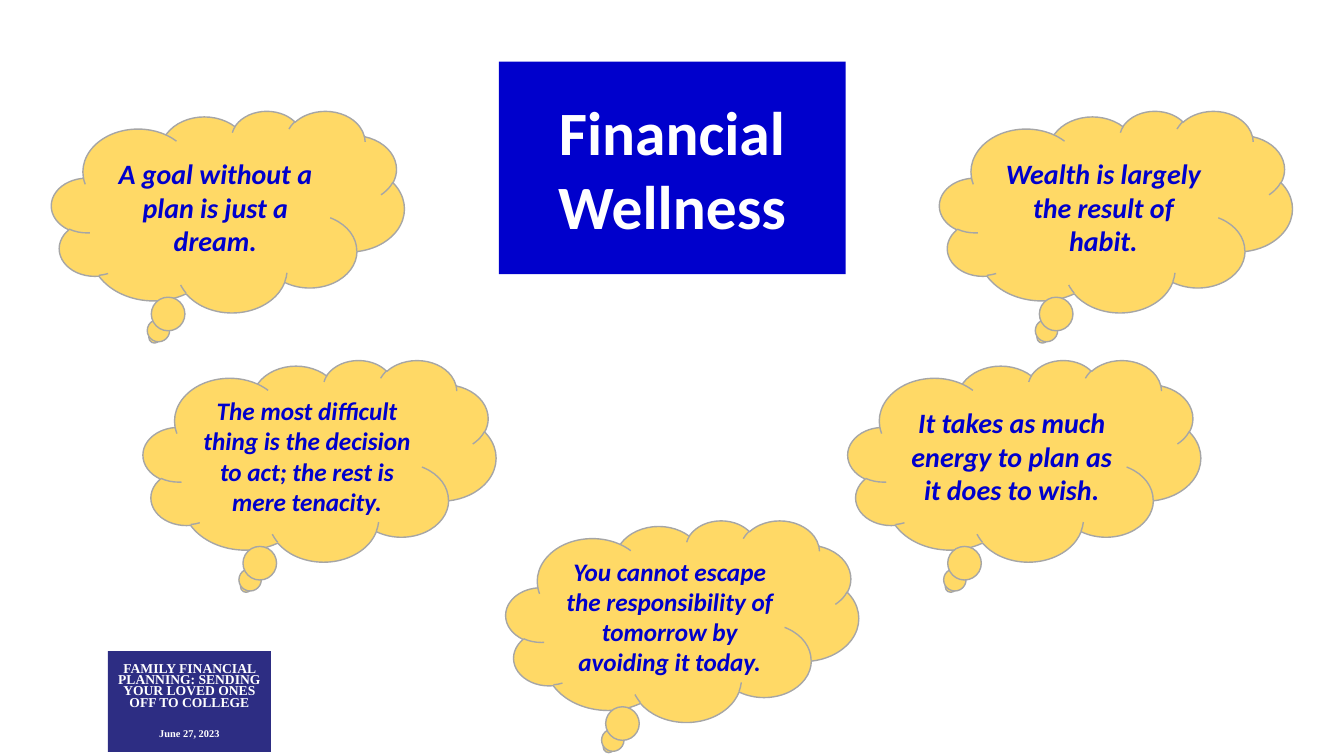
import pptx
import pptx.util
import pptx.dml.color
import pptx.enum.shapes
import pptx.enum.text
from lxml import etree

Cm, Pt = pptx.util.Cm, pptx.util.Pt
SHAPE = pptx.enum.shapes.MSO_SHAPE
ALIGN = pptx.enum.text.PP_ALIGN
BLUE, GOLD, GREY, NAVY, WHITE = "0000CC", "FFD966", "A6A6A6", "2D2D83", "FFFFFF"
WIDE, HIGH = 33.87, 19.05
CLOUD_W, CLOUD_H = 8.89, 5.08

TITLE = "Financial Wellness"
# Rows of clouds: left edge, top, text size and quote; a pair mirrors left to right.
ROWS = [
    (1.3, 2.79, [(20, "A goal without a plan is just a dream."),
                 (20, "Wealth is largely the result of habit.")]),
    (3.61, 9.07, [(18, "The most difficult thing is the decision to act; "
                       "the rest is mere tenacity."),
                  (20, "It takes as much energy to plan as it does to wish.")]),
    (12.75, 13.11, [(18, "You cannot escape the responsibility of tomorrow "
                         "by avoiding it today.")]),
]
# Footer lines: text, size, space before
FOOTER = [
    ("FAMILY FINANCIAL PLANNING: SENDING YOUR LOVED ONES OFF TO COLLEGE", 9.7, 0),
    ("June 27, 2023", 7.4, 15),
]


def color(code):
    return pptx.dml.color.RGBColor.from_string(code)


def paint(shape, fill, line=None):
    shape.fill.solid()
    shape.fill.fore_color.rgb = color(fill)
    if line:
        shape.line.color.rgb = color(line)
        shape.line.width = Pt(1)
    else:
        shape.line.fill.background()


def add(kind, box, fill, line=None):
    shape = slide.shapes.add_shape(kind, *map(Cm, box))
    shape.shadow.inherit = False
    paint(shape, fill, line)
    return shape


def write(para, text, size, code, face="Calibri", slant=False):
    para.text = text
    para.alignment = ALIGN.CENTER
    font = para.font
    font.name, font.size, font.bold, font.italic = face, Pt(size), True, slant
    font.color.rgb = color(code)


def middle(shape):
    frame = shape.text_frame
    frame.word_wrap = True
    frame.auto_size = pptx.enum.text.MSO_AUTO_SIZE.NONE
    frame.vertical_anchor = pptx.enum.text.MSO_ANCHOR.MIDDLE
    return frame


deck = pptx.Presentation()
deck.slide_width, deck.slide_height = Cm(WIDE), Cm(HIGH)
slide = deck.slides.add_slide(deck.slide_layouts[5])

# Title placeholder, given rounded corners
title = slide.shapes.title
title.left, title.top, title.width, title.height = map(Cm, (12.57, 1.55, 8.74, 5.36))
props = title.element.spPr
geom = etree.SubElement(props, pptx.oxml.ns.qn("a:prstGeom"), prst="roundRect")
etree.SubElement(geom, pptx.oxml.ns.qn("a:avLst"))
paint(title, BLUE)
write(middle(title).paragraphs[0], TITLE, 44, WHITE)

badge = add(SHAPE.RECTANGLE, (2.72, 16.41, 4.11, 2.54), NAVY)
frame = middle(badge)
for i, (text, size, gap) in enumerate(FOOTER):
    para = frame.add_paragraph() if i else frame.paragraphs[0]
    write(para, text, size, WHITE, "Times New Roman")
    para.line_spacing = 0.7
    if gap:
        para.space_before = Pt(gap)

for left, top, quotes in ROWS:
    for x, (size, text) in zip((left, WIDE - left - CLOUD_W), quotes):
        cloud = add(SHAPE.CLOUD_CALLOUT, (x, top, CLOUD_W, CLOUD_H), GOLD, GREY)
        write(middle(cloud).paragraphs[0], text, size, BLUE, slant=True)

deck.save("out.pptx")
